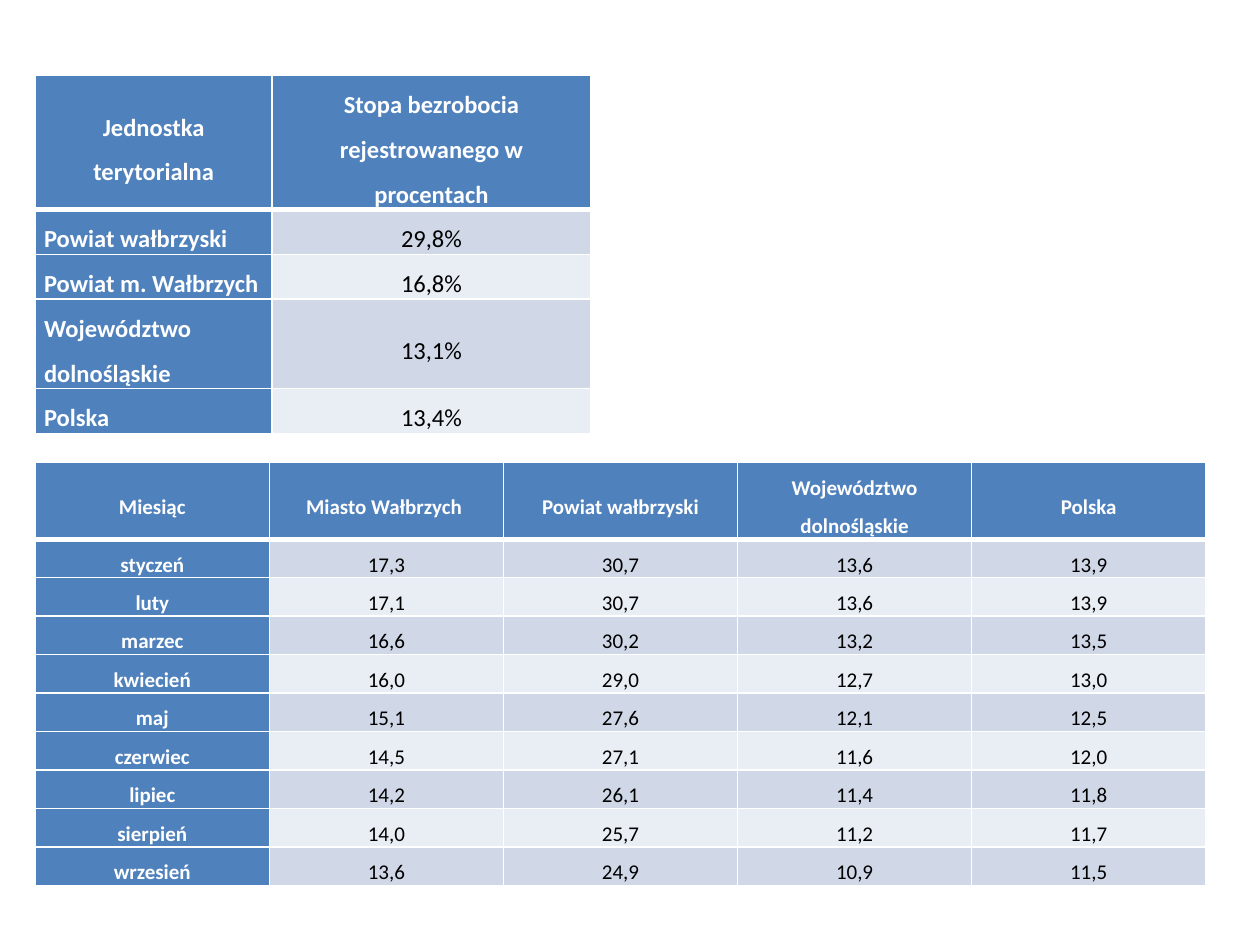
from lxml.etree import SubElement
from pptx import Presentation
from pptx.dml.color import RGBColor
from pptx.enum.text import MSO_ANCHOR, PP_ALIGN
from pptx.oxml.ns import qn
from pptx.util import Inches, Pt

COLORS = {
    "header": "4F81BD",
    "odd_band": "D0D8E8",
    "even_band": "E9EDF4",
    "light_text": "FFFFFF",
    "dark_text": "000000",
    "border": "FFFFFF",
}
FONT = "Calibri"

UNIT_ROWS = [
    ["Jednostka terytorialna", "Stopa bezrobocia rejestrowanego w procentach"],
    ["Powiat wałbrzyski", "29,8%"],
    ["Powiat m. Wałbrzych", "16,8%"],
    ["Województwo dolnośląskie", "13,1%"],
    ["Polska", "13,4%"],
]
MONTH_ROWS = [
    ["Miesiąc", "Miasto Wałbrzych ", "Powiat wałbrzyski",
     "Województwo dolnośląskie", "Polska"],
    ["styczeń", "17,3", "30,7", "13,6", "13,9"],
    ["luty", "17,1", "30,7", "13,6", "13,9"],
    ["marzec", "16,6", "30,2", "13,2", "13,5"],
    ["kwiecień", "16,0", "29,0", "12,7", "13,0"],
    ["maj", "15,1", "27,6", "12,1", "12,5"],
    ["czerwiec", "14,5", "27,1", "11,6", "12,0"],
    ["lipiec", "14,2", "26,1", "11,4", "11,8"],
    ["sierpień", "14,0", "25,7", "11,2", "11,7"],
    ["wrzesień", "13,6", "24,9", "10,9", "11,5"],
]


def set_borders(cell, row_index):
    """White grid lines, with a thick one below the header row."""
    properties = cell._tc.get_or_add_tcPr()
    top = 3 if row_index == 1 else 1
    bottom = 3 if row_index == 0 else 1
    for side, width in (("L", 1), ("R", 1), ("T", top), ("B", bottom)):
        line = SubElement(properties, qn(f"a:ln{side}"), w=str(Pt(width)))
        fill = SubElement(line, qn("a:solidFill"))
        SubElement(fill, qn("a:srgbClr"), val=COLORS["border"])


def format_cell(cell, text, row_index, column_index, size, spacing, alignment):
    is_heading = row_index == 0 or column_index == 0
    band = "odd_band" if row_index % 2 else "even_band"
    set_borders(cell, row_index)
    cell.fill.solid()
    cell.fill.fore_color.rgb = RGBColor.from_string(
        COLORS["header" if is_heading else band])
    cell.vertical_anchor = MSO_ANCHOR.MIDDLE
    cell.margin_left = cell.margin_right = Inches(0.07)
    cell.margin_top = cell.margin_bottom = 0

    cell.text_frame.text = text
    paragraph = cell.text_frame.paragraphs[0]
    paragraph.alignment = alignment
    paragraph.line_spacing = 1.5
    before, after = spacing
    paragraph.space_before, paragraph.space_after = Pt(before), Pt(after)
    font = paragraph.runs[0].font
    font.name, font.size, font.bold = FONT, Pt(size), is_heading
    font.color.rgb = RGBColor.from_string(
        COLORS["light_text" if is_heading else "dark_text"])


def add_rate_table(slide, box, rows, column_shares, row_lines, size,
                   header_spacing, body_spacing, label_alignment):
    """Fill the box; columns follow shares, rows follow their text lines."""
    left, top, width, height = box
    table = slide.shapes.add_table(
        len(rows), len(rows[0]), Inches(left), Inches(top),
        Inches(width), Inches(height)).table
    table.first_col = True
    for column, share in zip(table.columns, column_shares):
        column.width = Inches(width * share / sum(column_shares))
    for row, lines in zip(table.rows, row_lines):
        row.height = Inches(height * lines / sum(row_lines))

    for row_index, texts in enumerate(rows):
        spacing = body_spacing if row_index else header_spacing
        for column_index, text in enumerate(texts):
            is_label = row_index > 0 and column_index == 0
            alignment = label_alignment if is_label else PP_ALIGN.CENTER
            format_cell(table.cell(row_index, column_index), text,
                        row_index, column_index, size, spacing, alignment)


def main():
    presentation = Presentation()
    presentation.slide_width = Inches(10)
    presentation.slide_height = Inches(7.5)
    slide = presentation.slides.add_slide(presentation.slide_layouts[6])

    # Unemployment rate by territorial unit
    add_rate_table(slide, (0.28, 0.6, 4.41, 2.8), UNIT_ROWS,
                   [1.88, 2.53], [3, 1, 1, 2, 1], 14,
                   (10, 0), (4, 4), PP_ALIGN.LEFT)

    # Unemployment rate by month
    add_rate_table(slide, (0.28, 3.67, 9.29, 3.3), MONTH_ROWS,
                   [1] * 5, [2] + [1] * 9, 12,
                   (9.6, 9.6), (9.6, 9.6), PP_ALIGN.CENTER)

    presentation.save("out.pptx")


if __name__ == "__main__":
    main()
